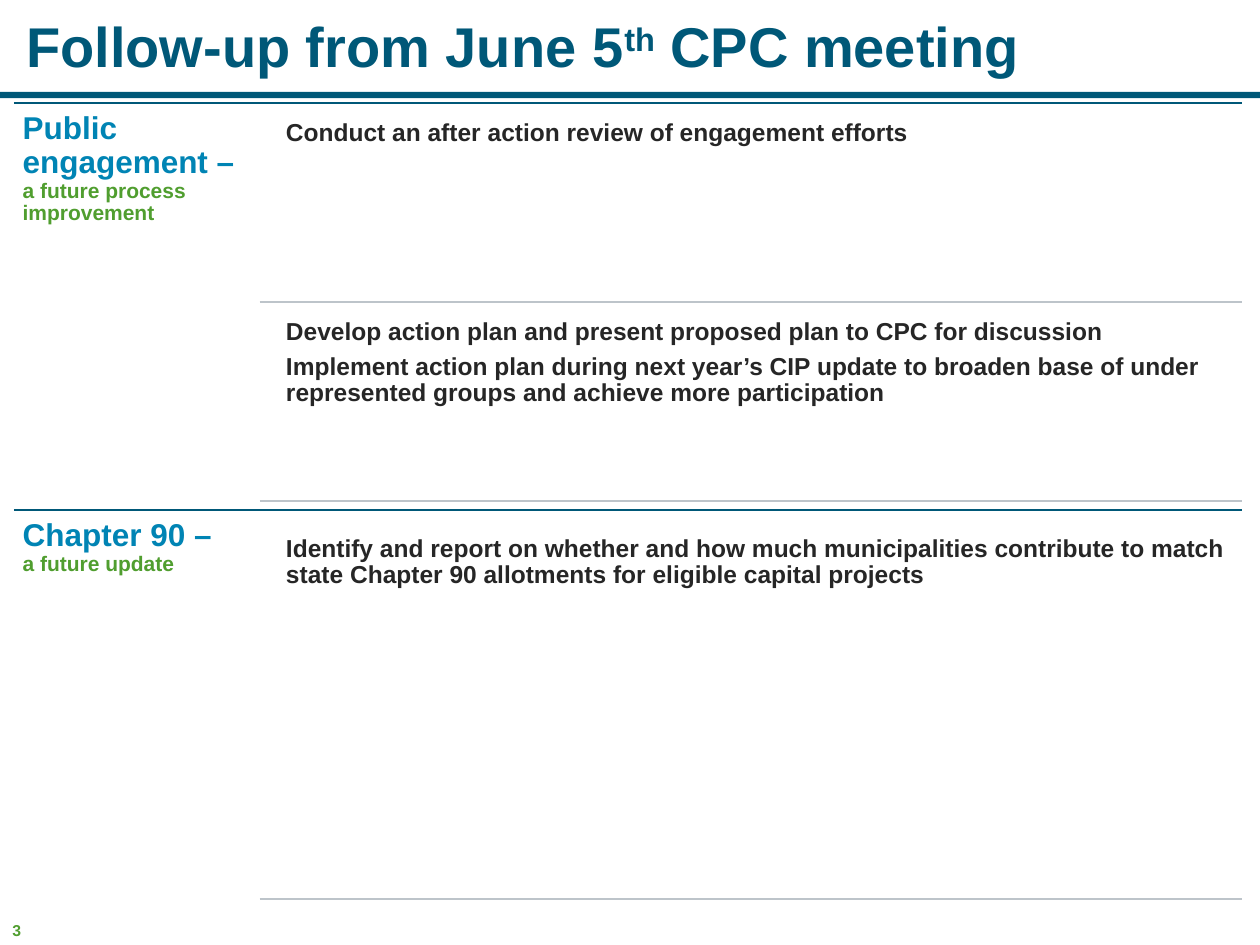
from collections import namedtuple

from lxml.etree import SubElement
from pptx import Presentation
from pptx.dml.color import RGBColor
from pptx.enum.shapes import MSO_CONNECTOR as Connector, MSO_SHAPE as Shape
from pptx.enum.text import MSO_ANCHOR as Anchor
from pptx.oxml.ns import qn
from pptx.util import Inches, Pt

Box = namedtuple("Box", "left top width height")

NAVY, BLUE, GREEN, DARK, GRAY = "005878", "0084B4", "509E2F", "262626", "BDC4CA"
LABEL_SHARE = 0.2
INDENT = 0.15
GAP_SHARE = 0.05

TOPICS = [
    ("Public engagement –", "a future process improvement", [
        ["Conduct an after action review of engagement efforts"],
        ["Develop action plan and present proposed plan to CPC for discussion",
         "Implement action plan during next year’s CIP update to broaden base "
         "of under represented groups and achieve more participation"],
    ]),
    ("Chapter 90 –", "a future update", [
        ["Identify and report on whether and how much municipalities contribute "
         "to match state Chapter 90 allotments for eligible capital projects"],
    ]),
]


def color(value):
    return RGBColor.from_string(value)


def set_all(target, values):
    for name, value in values.items():
        setattr(target, name, value)


def add_text_box(page, box, inset=None, wrap=True):
    frame = page.shapes.add_textbox(*map(Inches, box)).text_frame
    frame.word_wrap = wrap
    if inset is not None:
        sides = ("left", "top", "right", "bottom")
        set_all(frame, {f"margin_{side}": Inches(inset) for side in sides})
    return frame


def add_span(para, text, size, fill):
    span = para.add_run()
    span.text = text
    set_all(span.font, {"name": "Arial", "size": Pt(size), "bold": True})
    span.font.color.rgb = color(fill)
    return span


def add_rule(page, left, right, top, stroke):
    rule = page.shapes.add_connector(
        Connector.STRAIGHT, Inches(left), Inches(top), Inches(right), Inches(top))
    rule.line.color.rgb = color(stroke)
    rule.line.width = Pt(1)
    SubElement(rule._element.spPr, qn("a:effectLst"))


def add_title(page, box):
    frame = add_text_box(page, box)
    frame.vertical_anchor = Anchor.MIDDLE
    para = frame.paragraphs[0]
    para.line_spacing = 0.9
    add_span(para, "Follow-up from June 5", 32, NAVY)
    ordinal = add_span(para, "th", 32, NAVY)
    ordinal.font._element.set("baseline", "30000")
    add_span(para, " CPC meeting", 32, NAVY)


def add_band(page, box):
    band = page.shapes.add_shape(Shape.RECTANGLE, *map(Inches, box))
    band.shadow.inherit = False
    band.fill.solid()
    band.fill.fore_color.rgb = color(NAVY)
    band.line.fill.background()


def add_label(page, box, heading, note):
    para = add_text_box(page, box, 0.07).paragraphs[0]
    para.line_spacing = 0.9
    add_span(para, heading, 18, BLUE)
    para.add_line_break()
    add_span(para, note, 12, GREEN)


def add_actions(page, box, actions):
    frame = add_text_box(page, box, 0.06)
    for index, action in enumerate(actions):
        para = frame.add_paragraph() if index else frame.paragraphs[0]
        set_all(para, {"line_spacing": 0.9, "space_after": Pt(5)})
        add_span(para, action, 14, DARK)


def add_topic(page, box, heading, note, rows):
    right = box.left + box.width
    label_width = box.width * LABEL_SHARE
    split = box.left + label_width
    row_height = box.height / (len(rows) + GAP_SHARE * (len(rows) + 1))
    gap = row_height * GAP_SHARE
    add_rule(page, box.left, right, box.top, NAVY)
    add_label(page, box._replace(width=label_width), heading, note)
    for index, actions in enumerate(rows):
        top = box.top + gap + index * (row_height + gap)
        left = split + INDENT
        add_actions(page, Box(left, top, right - left, row_height), actions)
        add_rule(page, split, right, top + row_height, GRAY)


def add_topics(page, box):
    height = box.height / len(TOPICS)
    for index, topic in enumerate(TOPICS):
        area = box._replace(top=box.top + index * height, height=height)
        add_topic(page, area, *topic)


def add_page_number(page, box):
    frame = add_text_box(page, box, wrap=False)
    add_span(frame.paragraphs[0], "3", 9, GREEN)


def main():
    deck = Presentation()
    set_all(deck, {"slide_width": Inches(10), "slide_height": Inches(7.5)})
    page = deck.slides.add_slide(deck.slide_layouts[6])
    add_band(page, Box(0, 0.73, 10, 0.05))
    add_page_number(page, Box(0, 7.26, 0.36, 0.25))
    add_title(page, Box(0.11, 0.08, 9.75, 0.63))
    add_topics(page, Box(0.11, 0.82, 9.75, 6.46))
    deck.save("out.pptx")


if __name__ == "__main__":
    main()
